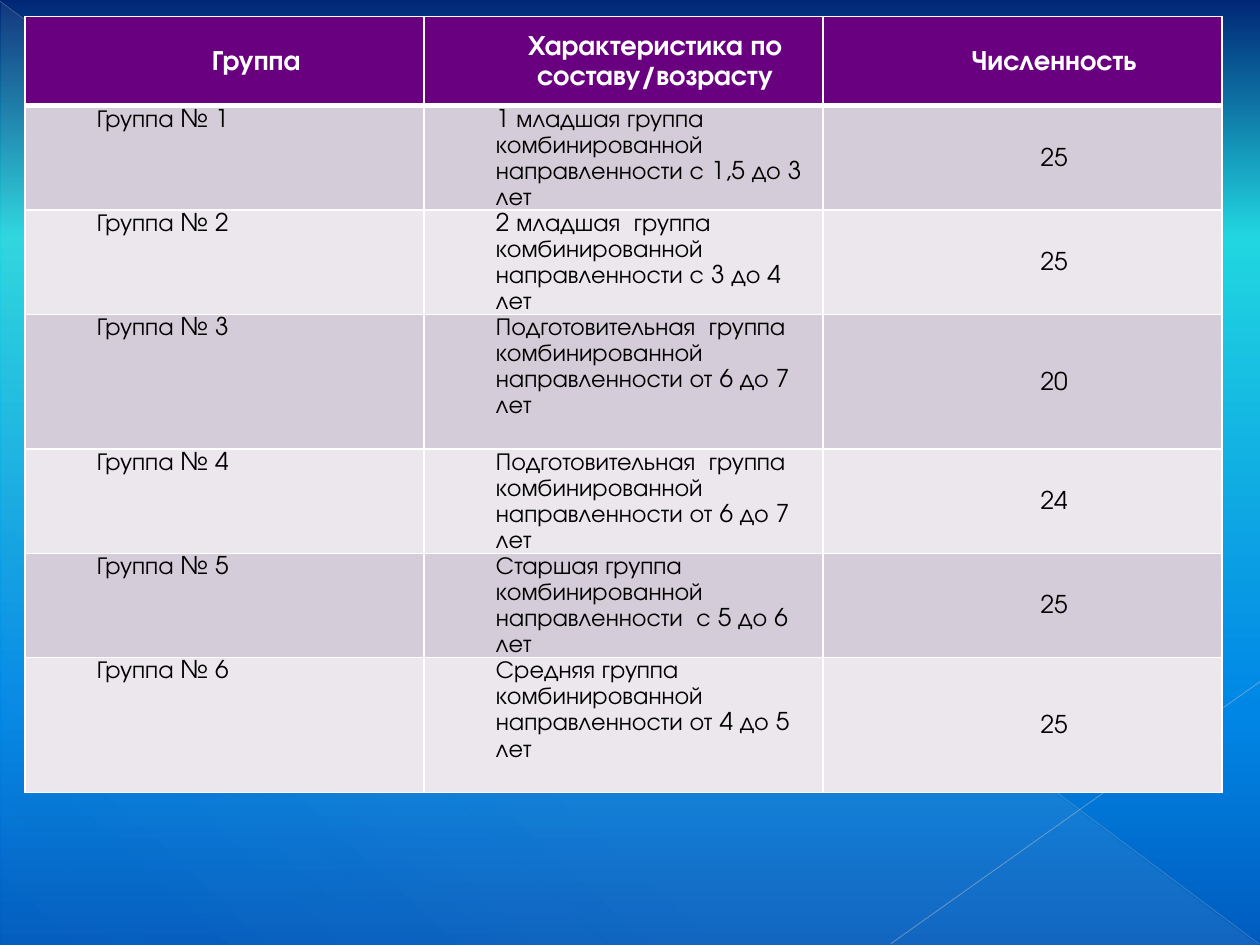
"""Build a slide with a table of kindergarten groups, their make-up and size."""
from lxml import etree
from pptx import Presentation
from pptx.dml.color import RGBColor
from pptx.enum import shapes, text
from pptx.oxml.ns import qn
from pptx.util import Inches, Pt

COLORS = {
    "navy": "002776", "aqua": "21D6E0", "azure": "0087E6", "ocean": "005CBF",
    "veil": "D2D2D2", "falling": "BFBFBF", "rising": "C6C6C6",
    "header": "68007F", "odd": "D4CCD8", "even": "EBE7EC",
    "white": "FFFFFF", "black": "000000",
}
HEADINGS = ("Группа", "Характеристика по составу/возрасту", "Численность")
GROUPS = (
    ("1 младшая группа комбинированной направленности с 1,5 до 3 лет", 25),
    ("2 младшая  группа комбинированной направленности с 3 до 4 лет", 25),
    ("Подготовительная  группа комбинированной направленности от 6 до 7 лет", 20),
    ("Подготовительная  группа комбинированной направленности от 6 до 7 лет", 24),
    ("Старшая группа комбинированной  направленности  с 5 до 6 лет", 25),
    ("Средняя группа комбинированной направленности от 4 до 5 лет", 25),
)
ROW_HEIGHTS = (0.71, 0.71, 0.71, 1.07, 0.71, 0.71, 1.07)
CELL_MARGINS = {"margin_left": Inches(0.07), "margin_right": Inches(0.07),
                "margin_top": 0, "margin_bottom": 0}


def apply(target, values):
    for name, value in values.items():
        setattr(target, name, value)


def add_color(parent, color, opacity=100):
    entry = etree.SubElement(parent, qn("a:srgbClr"), val=COLORS[color])
    if opacity < 100:
        etree.SubElement(entry, qn("a:alpha"), val=str(opacity * 1000))


class SlideBuilder:
    """Holds the text style and the current slide."""

    font = "TeX Gyre Adventor"
    line_spacing = 1.15
    indent = Inches(0.5)

    def __init__(self, slide):
        self.slide = slide

    def gradient(self, fill, owner, stops, angle):
        fill.gradient()
        gradient = owner.xpath(".//a:gradFill")[0]
        stop_list = gradient.find(qn("a:gsLst"))
        stop_list.clear()
        for position, color, opacity in stops:
            stop = etree.SubElement(stop_list, qn("a:gs"), pos=str(position * 1000))
            add_color(stop, color, opacity)
        gradient.find(qn("a:lin")).set("ang", str(angle * 60000))

    def background(self, stops, angle):
        self.gradient(self.slide.background.fill, self.slide.element, stops, angle)

    def triangle(self, left, top, width, height, stops, angle):
        veil = self.slide.shapes.add_shape(
            shapes.MSO_SHAPE.RIGHT_TRIANGLE,
            *map(Inches, (left, top, width, height)))
        veil.shadow.inherit = False
        veil.line.fill.background()
        self.gradient(veil.fill, veil.element, stops, angle)

    def line(self, start, end, color, weight, opacity):
        ray = self.slide.shapes.add_connector(
            shapes.MSO_CONNECTOR.STRAIGHT, *map(Inches, start + end))
        ray.line.width = Pt(weight)
        ray.line.fill.solid()
        solid = ray.element.spPr.find(qn("a:ln")).find(qn("a:solidFill"))
        solid.clear()
        add_color(solid, color, opacity)
        etree.SubElement(ray.element.spPr, qn("a:effectLst"))

    def cell(self, cell, words, fill, font, centered, borders):
        properties = cell._tc.get_or_add_tcPr()
        for side, weight in borders.items():
            border = etree.SubElement(properties, qn(f"a:ln{side}"), w=str(Pt(weight)))
            add_color(etree.SubElement(border, qn("a:solidFill")), "white")
        cell.fill.solid()
        cell.fill.fore_color.rgb = RGBColor.from_string(COLORS[fill])
        anchor = text.MSO_ANCHOR.MIDDLE if centered else text.MSO_ANCHOR.TOP
        apply(cell, {**CELL_MARGINS, "vertical_anchor": anchor, "text": words})
        paragraph = cell.text_frame.paragraphs[0]
        align = text.PP_ALIGN.CENTER if centered else text.PP_ALIGN.LEFT
        apply(paragraph, {"alignment": align, "line_spacing": self.line_spacing})
        layout = paragraph._p.get_or_add_pPr()
        layout.set("marL", str(self.indent))
        layout.set("indent", "0")
        color, size, bold = font
        run_font = paragraph.runs[0].font
        apply(run_font, {"name": self.font, "size": Pt(size), "bold": bold})
        run_font.color.rgb = RGBColor.from_string(COLORS[color])

    def table(self, left, top, width, records, heights):
        columns = len(records[0])
        table = self.slide.shapes.add_table(
            len(records), columns, Inches(left), Inches(top),
            Inches(width), Inches(sum(heights))).table
        apply(table, {"first_row": False, "horz_banding": False})
        for r, (record, height) in enumerate(zip(records, heights)):
            table.rows[r].height = Inches(height)
            heading = r == 0
            fill = "header" if heading else ("even", "odd")[r % 2]
            font = ("white", 16, True) if heading else ("black", 14, False)
            borders = {"L": 1, "R": 1, "T": 3 if r == 1 else 1, "B": 3 if heading else 1}
            for c, words in enumerate(record):
                centered = heading or c == columns - 1
                self.cell(table.cell(r, c), words, fill, font, centered, borders)


def main():
    deck = Presentation()
    apply(deck, {"slide_width": Inches(10), "slide_height": Inches(7.5)})
    builder = SlideBuilder(deck.slides.add_slide(deck.slide_layouts[6]))
    builder.background([(0, "navy", 100), (25, "aqua", 100),
                        (75, "azure", 100), (100, "ocean", 100)], 90)
    builder.triangle(0.01, 0.02, 9.98, 7.48,
                     [(0, "veil", 10), (70, "veil", 8), (100, "veil", 1)], 133)
    builder.line((0, 0.01), (9.99, 7.49), "falling", 0.39, 35)
    builder.line((10, 5.41), (7.07, 7.49), "rising", 0.47, 45)
    records = [HEADINGS] + [
        (f"Группа № {number}", description, str(size))
        for number, (description, size) in enumerate(GROUPS, 1)]
    builder.table(0.2, 0.13, 9.5, records, ROW_HEIGHTS)
    deck.save("out.pptx")


if __name__ == "__main__":
    main()
